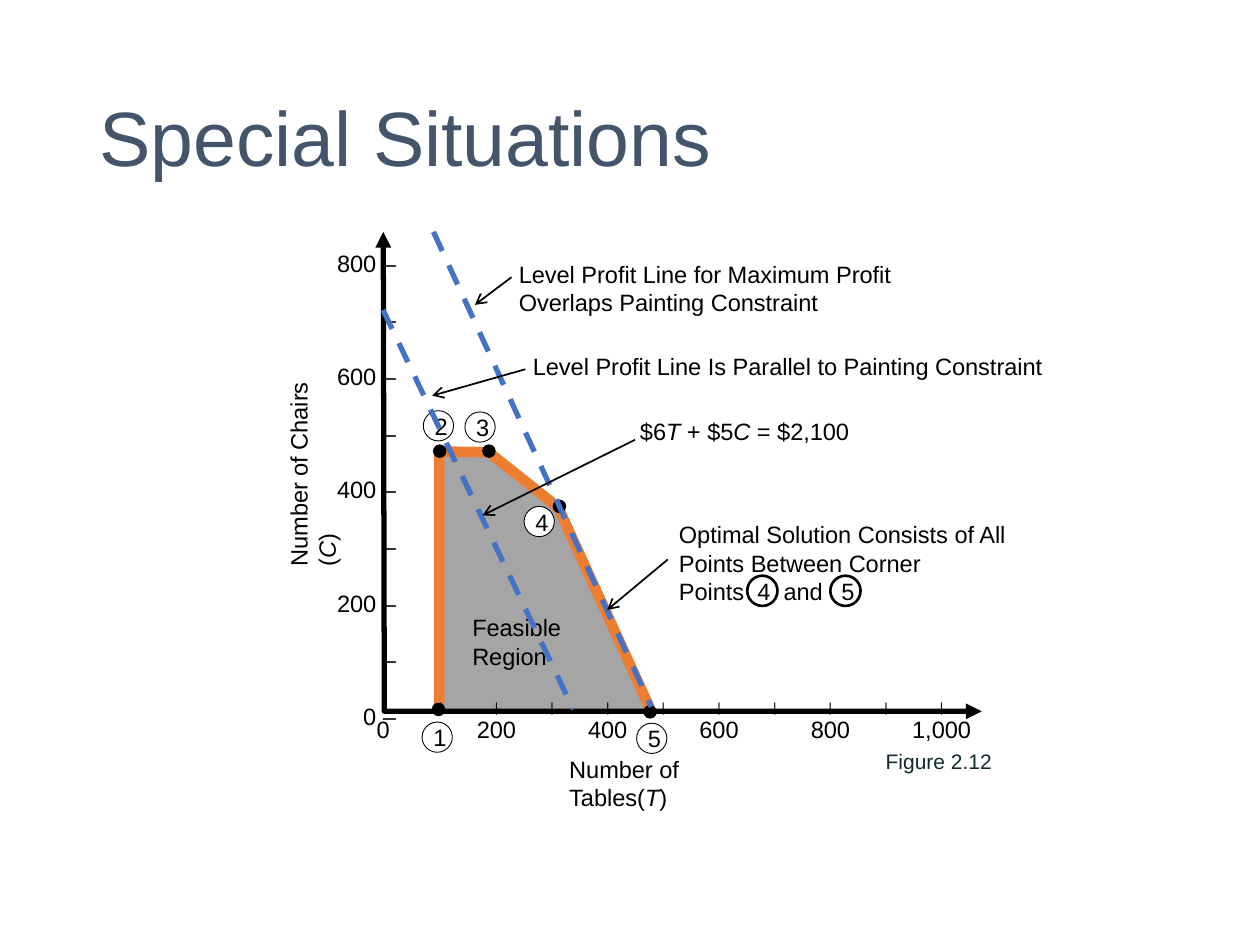
"""Build the slide on special situations in graphical linear programming."""
from lxml import etree
from pptx import Presentation
from pptx import util as u
from pptx.dml.color import RGBColor
from pptx.enum import dml, shapes, text
from pptx.oxml.ns import qn

BLACK, WHITE, BLUE, ORANGE, GRAY = "000000", "FFFFFF", "4472C4", "ED7D31", "A5A5A5"


def paint(item, fill=None, line=None, weight=0.5, dash=False, ends=()):
    if hasattr(item, "fill"):
        item.shadow.inherit = False
        if fill:
            item.fill.solid()
            item.fill.fore_color.rgb = RGBColor.from_string(fill)
        else:
            item.fill.background()
    else:
        etree.SubElement(item._element.spPr, qn("a:effectLst"))
    if not line:
        item.line.fill.background()
        return
    item.line.color.rgb = RGBColor.from_string(line)
    item.line.width = u.Pt(weight)
    if dash:
        item.line.dash_style = dml.MSO_LINE.DASH
    for tag, kind in ends:
        etree.SubElement(item.line._get_or_add_ln(), qn(tag), type=kind)


def write(left, top, width, height, lines, size=13.5, color=BLACK, wrap=True,
          tabs=(), align=None, spacing=None):
    box = page.shapes.add_textbox(*map(u.Pt, (left, top, width, height)))
    frame = box.text_frame
    frame.word_wrap = wrap
    frame.auto_size = text.MSO_AUTO_SIZE.SHAPE_TO_FIT_TEXT
    for row, line in enumerate(lines):
        para = frame.paragraphs[0] if row == 0 else frame.add_paragraph()
        para.alignment = align
        para.line_spacing = spacing
        if tabs:
            stops = etree.SubElement(para._p.get_or_add_pPr(), qn("a:tabLst"))
            for stop in tabs:
                etree.SubElement(stops, qn("a:tab"), pos=str(u.Pt(stop)), algn="ctr")
        for index, words in enumerate(line.split("*")):
            span = para.add_run()
            span.text = words
            span.font.name = "Arial"
            span.font.size = u.Pt(size)
            span.font.italic = index % 2 == 1
            span.font.color.rgb = RGBColor.from_string(color)
    return box


deck = Presentation()
deck.slide_width, deck.slide_height = u.Pt(720), u.Pt(540)
page = deck.slides.add_slide(deck.slide_layouts[6])

region = [(250.9, 406), (251, 258), (279.4, 258.4), (319, 290), (371.5, 405)]
axes = [(219, 132.5), (219.6, 406.5), (561, 406.5)]
outlines = {}
for name, points, closed in (("area", region, True), ("border", region, False),
                             ("axes", axes, False)):
    corners = [(u.Pt(x), u.Pt(y)) for x, y in points]
    builder = page.shapes.build_freeform(*corners[0], scale=1)
    builder.add_line_segments(corners[1:], close=closed)
    outlines[name] = builder.convert_to_shape()
paint(outlines["area"], fill=GRAY)
paint(outlines["border"], line=ORANGE, weight=6)
paint(outlines["axes"], line=BLACK, weight=3,
      ends=[("a:headEnd", "triangle"), ("a:tailEnd", "triangle")])

dots = [(250.6, 405.4), (371.5, 406.8), (279.4, 257.8), (251.3, 257.8), (319.7, 289.4)]
for x, y in dots:
    dot = page.shapes.add_shape(shapes.MSO_SHAPE.OVAL, *map(u.Pt, (x - 3.6, y - 3.6, 7.2, 7.2)))
    paint(dot, BLACK, BLACK)

badges = [("1", 241.2, 412.6), ("2", 241.9, 234.7), ("3", 265.7, 235.4),
          ("4", 299.5, 289.4), ("5", 363.8, 413.3)]
for number, x, y in badges:
    badge = page.shapes.add_shape(shapes.MSO_SHAPE.OVAL, *map(u.Pt, (x, y, 17.3, 17.3)))
    paint(badge, WHITE, BLACK)
    write(x - 0.7, y - 2.9, 22.3, 23.8, [number], wrap=False)
write(262.8, 347, 82.1, 40.3, ["Feasible Region"])

title = write(49.7, 28.8, 620.6, 104.4, ["Special Situations"], 44, "44546A", spacing=0.9)
title.text_frame.auto_size = text.MSO_AUTO_SIZE.NONE
title.text_frame.vertical_anchor = text.MSO_ANCHOR.MIDDLE
write(499, 424.1, 75.6, 21.6, ["Figure 2.12"], 12, "132A2C", wrap=False)

ticks = [36.7 + 31.8 * step for step in range(10)]
scale = write(208.1, 396, 399.6, 32.4,
              ["\t|" * 10, "\t\t".join(["0", "200", "400", "600", "800", "1,000"])], tabs=ticks)
for span in scale.text_frame.paragraphs[0].runs:
    span.font.size = u.Pt(7.5)
write(184.3, 122.4, 49, 301.7,
      ["800 –", "–", "600 –", "–", "400 –", "–", "200 –", "–", "0 –"],
      wrap=False, align=text.PP_ALIGN.RIGHT, spacing=2.0)
write(109.4, 241.2, 139, 40.3, ["Number of Chairs (*C*)"]).rotation = 270
write(318.2, 427.7, 135.4, 40.3, ["Number of Tables(*T*)"])

write(358.6, 234.7, 212.4, 23.8, ["$6*T* + $5*C* = $2,100"])
write(297.4, 197.3, 309.6, 23.8,
      ["Level Profit Line Is Parallel to Painting Constraint"], wrap=False)
write(289.4, 144.7, 259.2, 40.3,
      ["Level Profit Line for Maximum Profit Overlaps Painting Constraint"])
write(380.9, 293.8, 212.4, 56.2,
      ["Optimal Solution Consists of All Points Between Corner", "Points\t4\tand\t5"],
      tabs=(48.5, 71, 96.5))
for x in (427, 474.5):
    ring = page.shapes.add_shape(shapes.MSO_SHAPE.OVAL, *map(u.Pt, (x, 329, 17.3, 17.3)))
    paint(ring, line=BLACK, weight=1.5)

profit_lines = [(218.9, 177.1, 327.6, 405.4), (247.7, 132.5, 372.2, 403.9)]
pointers = [(362.9, 251.3, 275.8, 294.5), (300.2, 211, 247, 226.1),
            (292.3, 158.4, 271.4, 174.2), (381.6, 319.7, 347, 348.5)]
for ends in profit_lines + pointers:
    link = page.shapes.add_connector(shapes.MSO_CONNECTOR.STRAIGHT, *map(u.Pt, ends))
    if ends in profit_lines:
        paint(link, line=BLUE, weight=3, dash=True)
    else:
        paint(link, line=BLACK, weight=1, ends=[("a:tailEnd", "arrow")])

deck.save("out.pptx")
